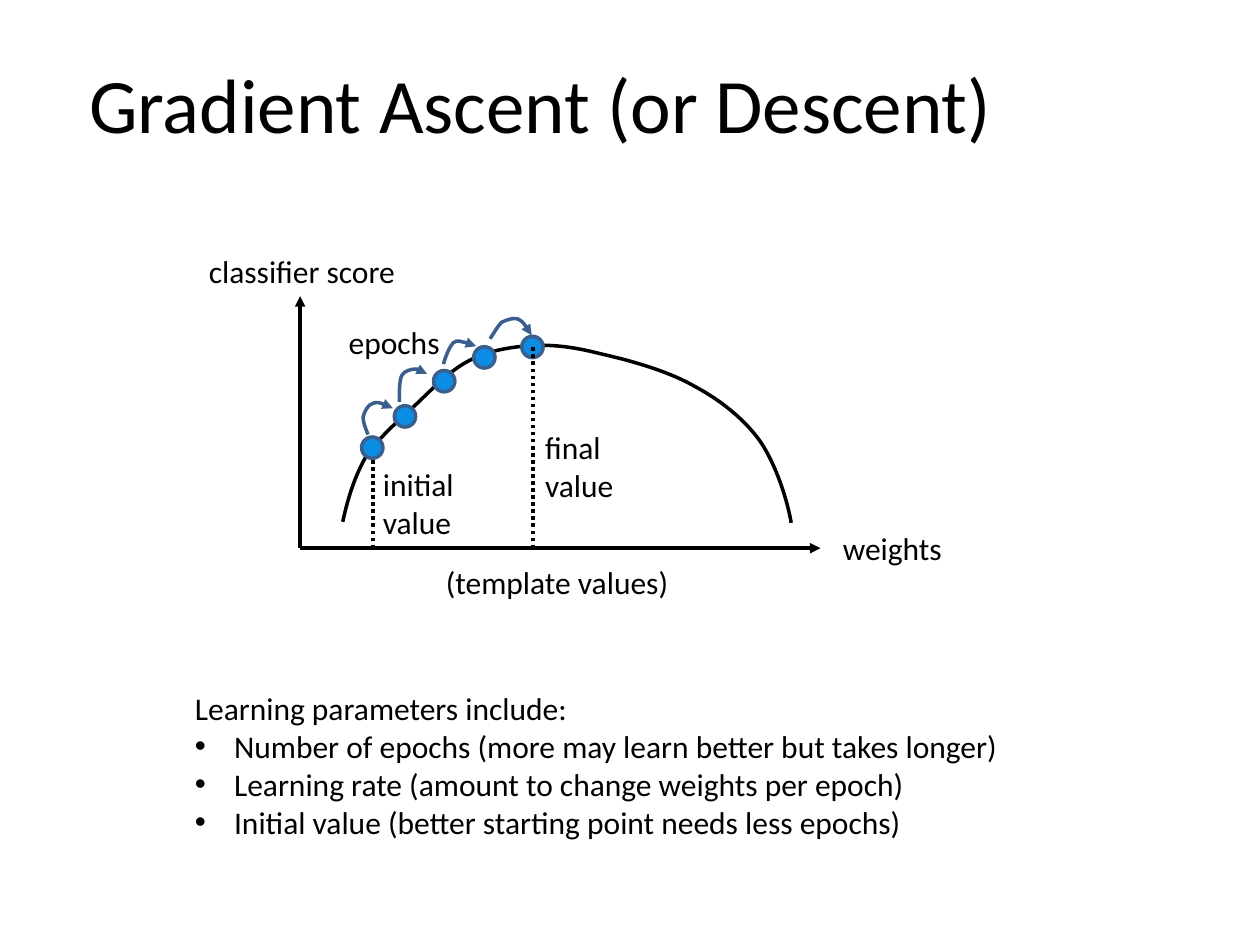
from lxml import etree
from pptx import Presentation
from pptx import util as u
from pptx.dml.color import RGBColor
from pptx.enum import dml, shapes, text
from pptx.oxml.ns import qn

hue = RGBColor.from_string
black, navy, blue = "000000", "3A5F8C", "0B8DE5"

deck = Presentation()
deck.slide_width, deck.slide_height = u.Cm(25.4), u.Cm(19.05)
slide = deck.slides.add_slide(deck.slide_layouts[6])
items = slide.shapes


def stroke(shape, color, tip=False):
    shape.line.color.rgb = hue(color)
    shape.line.width = u.Pt(2)
    if tip:
        ln = shape._element.spPr.find(qn("a:ln"))
        etree.SubElement(ln, qn("a:tailEnd"), type="triangle")


def rule(x1, y1, x2, y2, dots):
    line = items.add_connector(shapes.MSO_CONNECTOR.STRAIGHT,
                               u.Cm(x1), u.Cm(y1), u.Cm(x2), u.Cm(y2))
    if dots:
        line.line.dash_style = dml.MSO_LINE.ROUND_DOT
    stroke(line, black, not dots)
    etree.SubElement(line._element.spPr, qn("a:effectLst"))


base, left = 11.05, 6.05
rule(left, base, left, 5.97, False)
rule(left, base, 16.54, base, False)
rule(7.52, base, 7.52, 8.94, True)

hill = [(691, 1052), (701, 1006), (714, 963), (737, 922),
        (762, 884), (800, 851), (836, 818),
        (871, 785), (909, 744), (952, 724),
        (993, 704), (1041, 698), (1085, 696),
        (1128, 696), (1163, 701), (1214, 714),
        (1267, 726), (1344, 747), (1397, 777),
        (1450, 805), (1499, 843), (1532, 889),
        (1565, 937), (1588, 1011), (1595, 1054)]
hops = [
    [(742, 876), (737, 864), (732, 851), (732, 841), (734, 831),
     (742, 815), (752, 813), (762, 810), (777, 815), (792, 823)],
    [(805, 810), (805, 790), (805, 767), (810, 757), (815, 747),
     (831, 744), (838, 744), (846, 744), (853, 749), (861, 754)],
    [(894, 734), (899, 716), (907, 698), (914, 691), (922, 683),
     (932, 691), (942, 691), (950, 693), (955, 696), (960, 698)],
    [(988, 683), (996, 671), (1003, 658), (1011, 650), (1021, 645),
     (1034, 640), (1044, 643), (1054, 648), (1064, 663), (1072, 676)],
]
for points in [hill] + hops:
    pen = items.build_freeform(*points[0], scale=u.Cm(0.01))
    pen.add_line_segments(points[1:], close=False)
    curve = pen.convert_to_shape()
    steps = curve._element.xpath(".//a:lnTo")
    for i in range(0, len(steps), 3):
        bend = etree.Element(qn("a:cubicBezTo"))
        steps[i].addprevious(bend)
        for step in steps[i:i + 3]:
            bend.append(step[0])
            step.getparent().remove(step)
    curve.fill.background()
    curve.shadow.inherit = False
    stroke(curve, black if points is hill else navy, points is not hill)

for x, y in [(7.29, 8.81), (7.95, 8.18), (8.74, 7.47), (9.55, 6.99), (10.52, 6.78)]:
    dot = items.add_shape(shapes.MSO_SHAPE.OVAL, u.Cm(x), u.Cm(y), u.Cm(0.43), u.Cm(0.43))
    dot.fill.solid()
    dot.fill.fore_color.rgb = hue(blue)
    dot.shadow.inherit = False
    stroke(dot, navy)

rule(10.74, base, 10.74, 6.99, True)

labels = [
    (1.55, 1.02, 18.9, 2.13, 44, ["Gradient Ascent (or Descent)"]),
    (3.96, 4.95, 4.32, 1.02, 18, ["classifier score"]),
    (16.74, 10.54, 2.54, 1.02, 18, ["weights"]),
    (8.74, 11.23, 5.05, 1.02, 18, ["(template values)"]),
    (6.78, 6.38, 2.36, 1.02, 18, ["epochs"]),
    (7.47, 9.25, 1.96, 1.8, 18, ["initial", "value"]),
    (10.74, 8.51, 1.96, 1.8, 18, ["final", "value"]),
    (3.68, 13.77, 18.54, 3.33, 18, [
        "Learning parameters include:",
        "Number of epochs (more may learn better but takes longer)",
        "Learning rate (amount to change weights per epoch)",
        "Initial value (better starting point needs less epochs)"]),
]
for x, y, w, h, size, lines in labels:
    frame = items.add_textbox(u.Cm(x), u.Cm(y), u.Cm(w), u.Cm(h)).text_frame
    frame.word_wrap = len(lines) > 2
    frame.auto_size = text.MSO_AUTO_SIZE.SHAPE_TO_FIT_TEXT
    frame.text = "\n".join(lines)
    for i, para in enumerate(frame.paragraphs):
        para.font.name = "Calibri"
        para.font.size = u.Pt(size)
        para.font.color.rgb = hue(black)
        if frame.word_wrap and i:
            props = para._p.get_or_add_pPr()
            props.set("marL", str(u.Cm(0.79)))
            props.set("indent", str(-u.Cm(0.79)))
            mark = etree.Element(qn("a:buChar"), char="•")
            face = etree.Element(qn("a:buFont"), typeface="Arial")
            props.insert(0, mark)
            props.insert(0, face)

deck.save("out.pptx")
